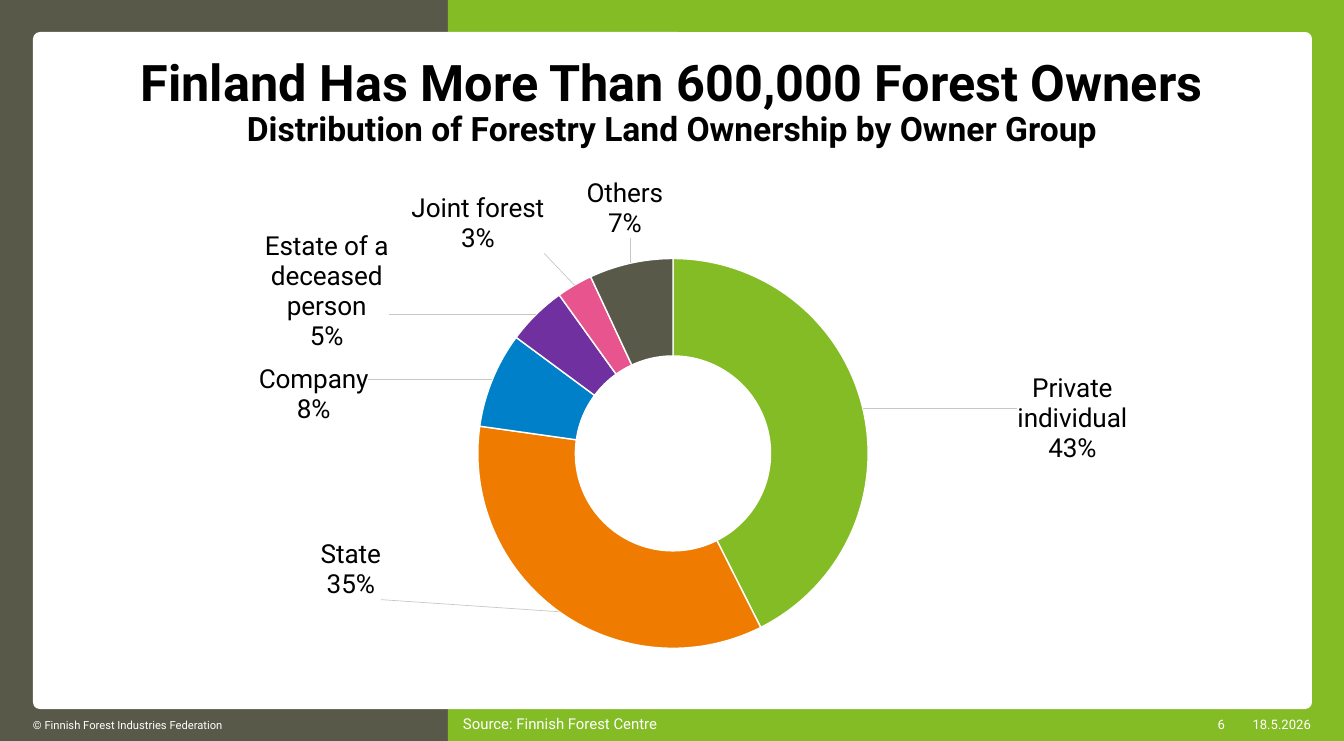
from math import cos, pi, sin

from lxml import etree
from pptx import Presentation
from pptx.chart.data import CategoryChartData
from pptx.dml.color import RGBColor
from pptx.enum.chart import XL_CHART_TYPE as ChartType
from pptx.enum.shapes import MSO_SHAPE as Shape
from pptx.enum.text import MSO_ANCHOR as Anchor, PP_ALIGN as Align
from pptx.oxml import parse_xml
from pptx.util import Pt

EMU_PER_PX = 914400 / 67.2
WIDTH, HEIGHT = 1344, 741
FONT = "Roboto"
GREEN, OLIVE, WHITE, BLACK = "84BC26", "595949", "FFFFFF", "000000"

# Title lines: text, size
TITLE = [
    ("Finland Has More Than 600,000 Forest Owners", 54),
    ("Distribution of Forestry Land Ownership by Owner Group", 36),
]
# Owner groups: name, share, colour, centre of the label in px
OWNERS = [
    ("Private individual", 0.43, GREEN, (1070, 417)),
    ("State", 0.35, "EF7C00", (349, 568)),
    ("Company", 0.08, "0080C8", (312, 393)),
    ("Estate of a deceased person", 0.05, "7030A0", (325, 290)),
    ("Joint forest", 0.03, "E8548D", (476, 222)),
    ("Others", 0.07, OLIVE, (623, 207)),
]
# Footer: text, box in px, size, alignment
FOOTER = [
    ("© Finnish Forest Industries Federation", (33, 714, 415, 23), 12, Align.LEFT),
    ("Source: Finnish Forest Centre", (463, 709, 418, 32), 16, Align.LEFT),
    ("6", (1189, 709, 36, 32), 14, Align.RIGHT),
    ("18.5.2026", (1238, 709, 73, 32), 14, Align.RIGHT),
]
# Chart frame, ring centre and mean ring radius in px
CHART_BOX = (84, 173, 1178, 476)
RING_CENTRE, RING_RADIUS = (671, 452), 146
PLOT = {"x": 0.32, "y": 0.18, "w": 0.36, "h": 0.82}

C_NS = "http://schemas.openxmlformats.org/drawingml/2006/chart"
A_NS = "http://schemas.openxmlformats.org/drawingml/2006/main"
C15_NS = "http://schemas.microsoft.com/office/drawing/2012/chart"
NAMESPACES = f'xmlns:c="{C_NS}" xmlns:a="{A_NS}" xmlns:c15="{C15_NS}"'


def px(*values):
    return [round(value * EMU_PER_PX) for value in values]


def color(hex_text):
    return RGBColor.from_string(hex_text)


def style(font, size, hex_text, bold=False):
    font.name, font.size, font.bold = FONT, Pt(size), bold
    font.color.rgb = color(hex_text)


def add_panel(slide, kind, box, fill):
    panel = slide.shapes.add_shape(kind, *px(*box))
    panel.shadow.inherit = False
    panel.fill.solid()
    panel.fill.fore_color.rgb = color(fill)
    panel.line.fill.background()
    return panel


def add_text(slide, box, lines, hex_text, align, bold=False):
    frame = slide.shapes.add_textbox(*px(*box)).text_frame
    frame.word_wrap = True
    for index, (text, size) in enumerate(lines):
        para = frame.add_paragraph() if index else frame.paragraphs[0]
        para.text, para.alignment = text, align
        para.line_spacing = 0.9
        style(para.font, size, hex_text, bold)
    return frame


def layout_xml(settings):
    inner = "".join(f'<c:{tag} val="{value}"/>' for tag, value in settings)
    return f"<c:layout {NAMESPACES}><c:manualLayout>{inner}</c:manualLayout></c:layout>"


def label_offsets():
    """Shift of each label from the middle of its ring segment, as chart fractions."""
    total, passed = sum(owner[1] for owner in OWNERS), 0
    for _, share, _, (x, y) in OWNERS:
        angle = 2 * pi * (passed + share / 2) / total
        passed += share
        middle_x = RING_CENTRE[0] + RING_RADIUS * sin(angle)
        middle_y = RING_CENTRE[1] - RING_RADIUS * cos(angle)
        yield (x - middle_x) / CHART_BOX[2], (y - middle_y) / CHART_BOX[3]


def place_labels(labels):
    """Move each label out of the ring and join it with a leader line."""
    root = labels._element
    shown = "".join(
        f'<c:{tag} val="{value}"/>'
        for tag, value in [("showLegendKey", 0), ("showVal", 1), ("showCatName", 1),
                           ("showSerName", 0), ("showPercent", 0), ("showBubbleSize", 0)]
    ) + "<c:separator>\n</c:separator>"
    for index, (x, y) in enumerate(label_offsets()):
        layout = layout_xml([("x", round(x, 4)), ("y", round(y, 4))])
        root.insert(index, parse_xml(
            f'<c:dLbl {NAMESPACES}><c:idx val="{index}"/>{layout}{shown}</c:dLbl>'))
    for old in root.findall(f"{{{C_NS}}}showLeaderLines"):
        root.remove(old)
    tail = parse_xml(
        f"<c:tail {NAMESPACES}><c:separator>\n</c:separator>"
        '<c:showLeaderLines val="1"/><c:leaderLines><c:spPr><a:ln w="9525"><a:solidFill>'
        '<a:srgbClr val="C8C8C0"/></a:solidFill></a:ln></c:spPr></c:leaderLines>'
        '<c:extLst><c:ext uri="{CE6537A1-D6FC-4f65-9D91-7224C49458BB}">'
        '<c15:showLeaderLines val="1"/></c:ext></c:extLst></c:tail>')
    for part in list(tail):
        root.append(part)


def add_ownership_chart(slide):
    data = CategoryChartData(number_format="0%")
    data.categories = [owner[0] for owner in OWNERS]
    data.add_series("Series 1", [owner[1] for owner in OWNERS])
    chart = slide.shapes.add_chart(ChartType.DOUGHNUT, *px(*CHART_BOX), data).chart
    chart.has_legend = chart.has_title = False
    style(chart.font, 10, OLIVE)
    plot = chart.plots[0]
    plot.vary_by_categories = True
    series = plot.series[0]
    for index, owner in enumerate(OWNERS):
        segment = series.points[index].format
        segment.fill.solid()
        segment.fill.fore_color.rgb = color(owner[2])
        segment.line.color.rgb = color(WHITE)
        segment.line.width = Pt(1.5)

    labels = series.data_labels
    labels.show_value = labels.show_category_name = True
    labels.show_percentage = False
    labels.number_format, labels.number_format_is_linked = "0%", False
    style(labels.font, 28, BLACK)
    place_labels(labels)

    # Ring position and hole
    area = plot._element.getparent()
    for old in area.findall(f"{{{C_NS}}}layout"):
        area.remove(old)
    settings = [("layoutTarget", "inner"), ("xMode", "edge"), ("yMode", "edge")]
    area.insert(0, parse_xml(layout_xml(settings + list(PLOT.items()))))
    hole = plot._element.find(f"{{{C_NS}}}holeSize")
    if hole is None:
        hole = etree.SubElement(plot._element, f"{{{C_NS}}}holeSize")
    hole.set("val", "50")


def main():
    deck = Presentation()
    deck.slide_width, deck.slide_height = px(WIDTH, HEIGHT)
    slide = deck.slides.add_slide(deck.slide_layouts[6])

    # Two-colour frame and white card
    add_panel(slide, Shape.RECTANGLE, (0, 0, 448, HEIGHT), OLIVE)
    add_panel(slide, Shape.RECTANGLE, (448, 0, WIDTH - 448, HEIGHT), GREEN)
    card = add_panel(slide, Shape.ROUNDED_RECTANGLE, (33, 32, 1279, 677), WHITE)
    card.adjustments[0] = 0.01

    # Footer
    for text, box, size, align in FOOTER:
        frame = add_text(slide, box, [(text, size)], WHITE, align)
        frame.vertical_anchor = Anchor.MIDDLE
        frame.margin_left = frame.margin_right = 0
        frame.margin_top = frame.margin_bottom = 0

    # Title and chart
    add_text(slide, (83, 55, 1178, 97), TITLE, BLACK, Align.CENTER, bold=True)
    add_ownership_chart(slide)
    deck.save("out.pptx")


if __name__ == "__main__":
    main()
